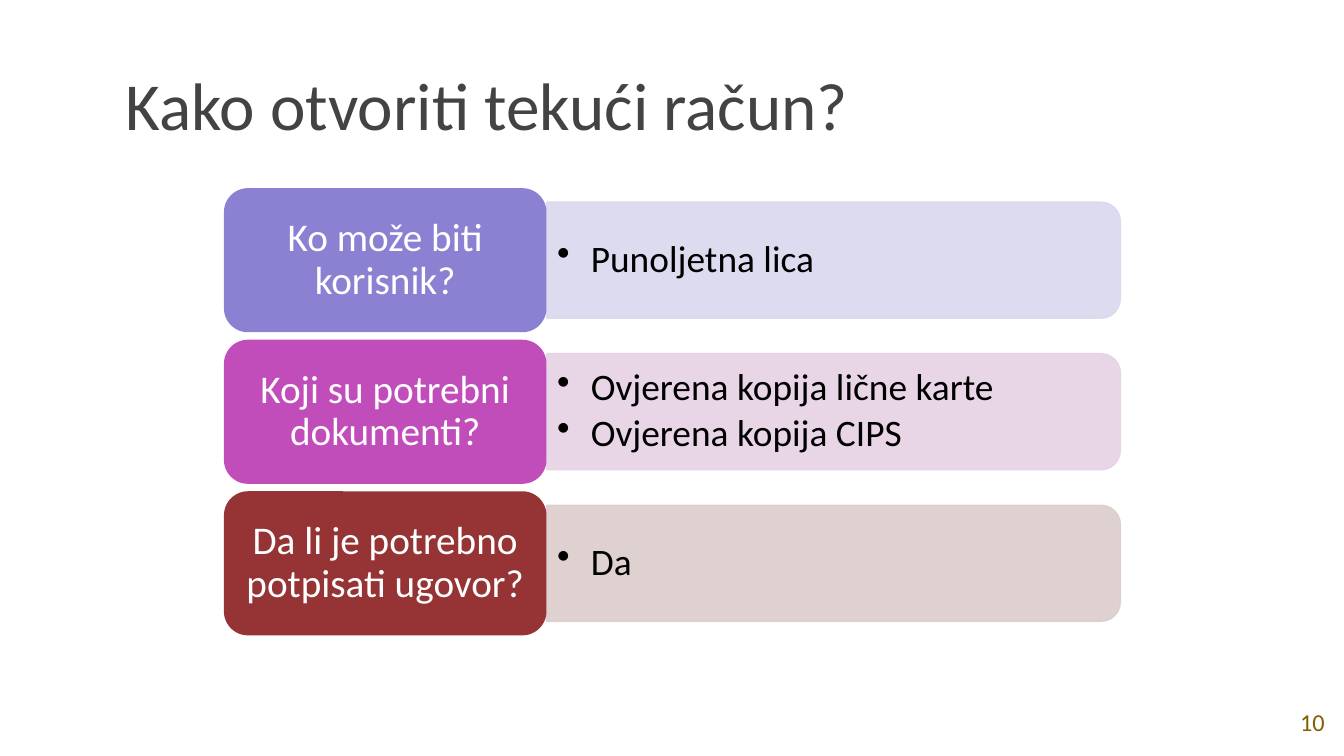
"""Builds a slide of three questions and answers about opening a current account."""
from lxml.etree import SubElement
from pptx import Presentation
from pptx.dml.color import RGBColor
from pptx.enum.shapes import MSO_SHAPE
from pptx.enum.text import MSO_ANCHOR, MSO_AUTO_SIZE, PP_ALIGN
from pptx.oxml.ns import qn
from pptx.util import Pt

WHITE = RGBColor(0xFF, 0xFF, 0xFF)
BLACK = RGBColor(0x00, 0x00, 0x00)
GREY = RGBColor(0x43, 0x43, 0x43)
OLIVE = RGBColor(0x7F, 0x60, 0x00)
VIOLET = RGBColor(0x8B, 0x81, 0xD2)
PALE_VIOLET = RGBColor(0xDA, 0xD8, 0xEE)
MAGENTA = RGBColor(0xC1, 0x4D, 0xBA)
PALE_MAGENTA = RGBColor(0xE6, 0xD2, 0xE5)
RED = RGBColor(0x96, 0x33, 0x34)
PALE_RED = RGBColor(0xDD, 0xCD, 0xCD)

ROWS = [
    ("Ko može biti korisnik?", ["Punoljetna lica"], VIOLET, PALE_VIOLET),
    ("Koji su potrebni dokumenti?",
     ["Ovjerena kopija lične karte", "Ovjerena kopija CIPS"], MAGENTA, PALE_MAGENTA),
    ("Da li je potrebno potpisati ugovor?", ["Da"], RED, PALE_RED),
]
LABEL_X, LABEL_W, LABEL_H = 120, 172.8, 77.2
TOP, PITCH = 100.8, 81.2
PANEL_X, PANEL_W, PANEL_H = LABEL_X + LABEL_W, 307.4, 62.2


def write(sp, lines, size, color, align=PP_ALIGN.LEFT, anchor=MSO_ANCHOR.MIDDLE,
          inset=(7.2, 7.2), spacing=1.0, after=0, bullet=False):
    tf = sp.text_frame
    tf.word_wrap = True
    tf.auto_size = MSO_AUTO_SIZE.NONE
    tf.vertical_anchor = anchor
    tf.margin_left = tf.margin_right = Pt(inset[0])
    tf.margin_top = tf.margin_bottom = Pt(inset[1])
    for i, line in enumerate(lines):
        p = tf.paragraphs[0] if i == 0 else tf.add_paragraph()
        p.alignment = align
        p.line_spacing = spacing
        p.space_after = Pt(after)
        if bullet:
            pPr = p._p.get_or_add_pPr()
            pPr.set("marL", str(Pt(18)))
            pPr.set("indent", str(Pt(-18)))
            SubElement(pPr, qn("a:buChar"), char="•")
        r = p.add_run()
        r.text = line
        r.font.name = "Calibri"
        r.font.size = Pt(size)
        r.font.color.rgb = color


prs = Presentation()
prs.slide_width, prs.slide_height = Pt(720), Pt(405)
slide = prs.slides.add_slide(prs.slide_layouts[5])
shapes = slide.shapes

title = shapes.title
title.left, title.top, title.width, title.height = Pt(60), Pt(16.5), Pt(443), Pt(67.7)
write(title, ["Kako otvoriti tekući račun?"], 36, GREY, anchor=MSO_ANCHOR.BOTTOM)

number = shapes.add_textbox(Pt(686), Pt(368), Pt(34), Pt(37))
write(number, ["10"], 13, OLIVE, align=PP_ALIGN.CENTER)

for i, (question, answers, color, pale) in enumerate(ROWS):
    top = TOP + i * PITCH
    middle = top + LABEL_H / 2

    panel = shapes.add_shape(
        MSO_SHAPE.ROUND_2_SAME_RECTANGLE,
        Pt(PANEL_X + (PANEL_W - PANEL_H) / 2), Pt(middle - PANEL_W / 2),
        Pt(PANEL_H), Pt(PANEL_W))
    panel.rotation = 90
    panel.shadow.inherit = False
    panel.fill.solid()
    panel.fill.fore_color.rgb = pale
    panel.line.color.rgb = pale
    panel.line.width = Pt(0.75)
    for clr in panel._element.spPr.iter(qn("a:srgbClr")):
        SubElement(clr, qn("a:alpha"), val="90000")

    answer = shapes.add_textbox(Pt(PANEL_X), Pt(middle - 28), Pt(304), Pt(56))
    write(answer, answers, 20, BLACK, inset=(5.76, 2.88), spacing=0.9, after=3, bullet=True)

    label = shapes.add_shape(
        MSO_SHAPE.ROUNDED_RECTANGLE, Pt(LABEL_X), Pt(top), Pt(LABEL_W), Pt(LABEL_H))
    label.shadow.inherit = False
    label.fill.solid()
    label.fill.fore_color.rgb = color
    label.line.fill.background()
    write(label, [question], 21, WHITE, align=PP_ALIGN.CENTER, inset=(6.5, 2.88), spacing=0.9)

prs.save("out.pptx")
